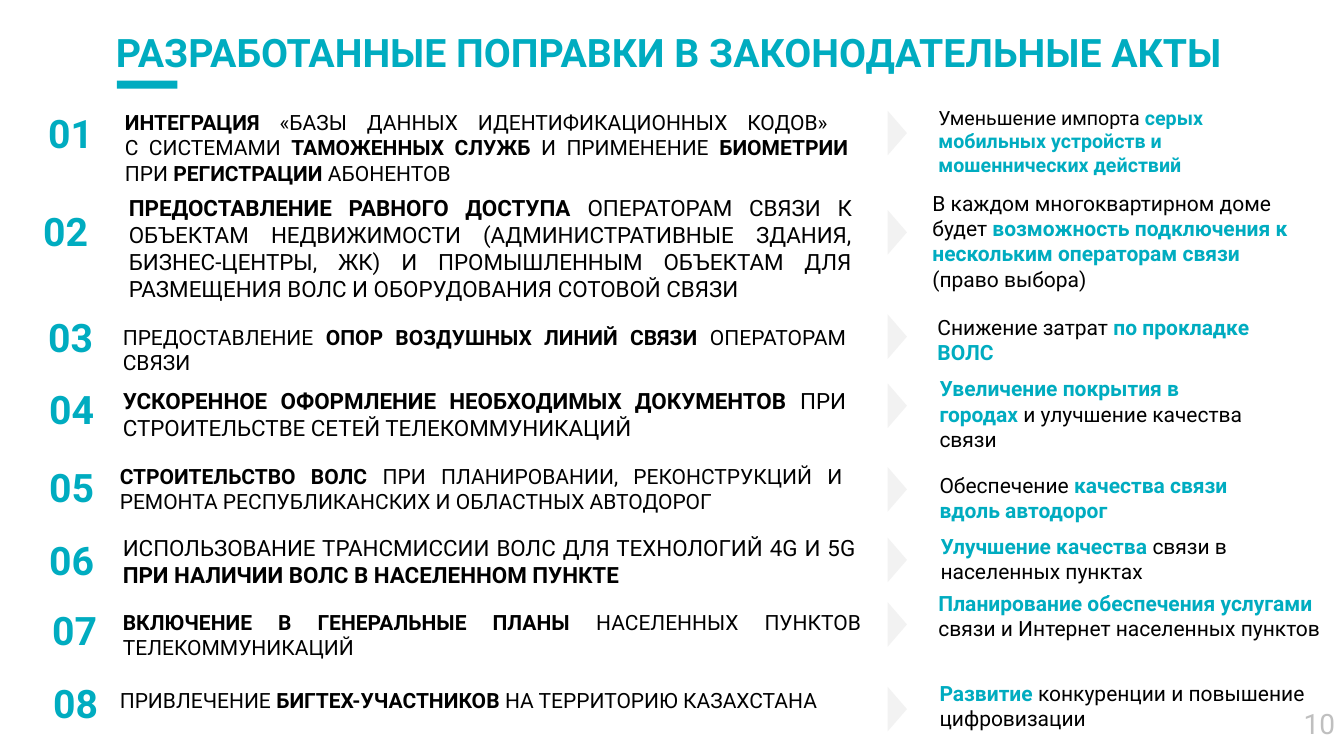
from pptx import Presentation
from pptx.dml.color import RGBColor
from pptx.enum.shapes import MSO_SHAPE as Shape
from pptx.enum.text import MSO_ANCHOR as Anchor, MSO_AUTO_SIZE as Fit, PP_ALIGN as Align
from pptx.util import Inches, Pt

COLORS = {"accent": "00ACC0", "text": "000000", "arrow": "F2F2F2", "page": "BFBFBF"}
GRID = Inches(0.01)
ARROW_CENTER, ARROW_LENGTH, ARROW_WIDTH = 890, 19, 44

deck = Presentation()
deck.slide_width, deck.slide_height = 1333 * GRID, 750 * GRID
slide = deck.slides.add_slide(deck.slide_layouts[5])


def write(text, left, top, width, lines=1, size=15, color="text", strong="text",
          bold=False, align=Align.LEFT, box=None):
    box = box or slide.shapes.add_textbox(0, 0, 0, 0)
    box.left, box.top, box.width = left * GRID, top * GRID, width * GRID
    box.height = round((10 + lines * size * 1.69) * GRID)
    frame = box.text_frame
    frame.word_wrap = True
    frame.auto_size = Fit.SHAPE_TO_FIT_TEXT
    frame.vertical_anchor = Anchor.TOP
    paragraph = frame.paragraphs[0]
    paragraph.alignment = align
    for part, piece in enumerate(text.split("*")):
        marked = part % 2 == 1
        for number, line in enumerate(piece.split("\n")):
            if number:
                paragraph.add_line_break()
            if line:
                run = paragraph.add_run()
                run.text = line
                run.font.name = "Roboto"
                run.font.size = Pt(size)
                run.font.bold = bold or marked
                run.font.color.rgb = RGBColor.from_string(COLORS[strong if marked else color])


def draw(kind, left, top, width, height, color, rotation=0):
    figure = slide.shapes.add_shape(kind, round(left * GRID), round(top * GRID),
                                    width * GRID, height * GRID)
    figure.rotation = rotation
    figure.shadow.inherit = False
    figure.fill.solid()
    figure.fill.fore_color.rgb = RGBColor.from_string(COLORS[color])
    figure.line.fill.background()


write("РАЗРАБОТАННЫЕ ПОПРАВКИ В ЗАКОНОДАТЕЛЬНЫЕ АКТЫ", 105, 23, 1254,
      size=28, color="accent", bold=True, box=slide.shapes.title)
draw(Shape.RECTANGLE, 116, 80, 60, 8, "accent")

amendments = [
    dict(number=(38, 104), arrow=132,
         change=dict(left=114, top=104, width=737, lines=3,
                     text="*ИНТЕГРАЦИЯ* «БАЗЫ ДАННЫХ ИДЕНТИФИКАЦИОННЫХ КОДОВ» \n"
                          "С СИСТЕМАМИ *ТАМОЖЕННЫХ СЛУЖБ* И ПРИМЕНЕНИЕ *БИОМЕТРИИ* "
                          "ПРИ *РЕГИСТРАЦИИ* АБОНЕНТОВ"),
         effect=dict(left=921, top=100, width=313, lines=3, size=14,
                     text="Уменьшение импорта *серых мобильных устройств и "
                          "мошеннических действий*")),
    dict(number=(33, 201), arrow=230.5,
         change=dict(left=118, top=188, width=737, lines=4, size=16,
                     text="*ПРЕДОСТАВЛЕНИЕ РАВНОГО ДОСТУПА *ОПЕРАТОРАМ СВЯЗИ К ОБЪЕКТАМ "
                          "НЕДВИЖИМОСТИ (АДМИНИСТРАТИВНЫЕ ЗДАНИЯ, БИЗНЕС-ЦЕНТРЫ, ЖК) "
                          "И ПРОМЫШЛЕННЫМ ОБЪЕКТАМ ДЛЯ РАЗМЕЩЕНИЯ ВОЛС И ОБОРУДОВАНИЯ "
                          "СОТОВОЙ СВЯЗИ"),
         effect=dict(left=915, top=184, width=387, lines=4,
                     text="В каждом многоквартирном доме будет *возможность подключения "
                          "к нескольким операторам связи *(право выбора)")),
    dict(number=(38, 306), arrow=334,
         change=dict(left=112, top=317, width=737, lines=2,
                     text="ПРЕДОСТАВЛЕНИЕ *ОПОР ВОЗДУШНЫХ ЛИНИЙ СВЯЗИ *ОПЕРАТОРАМ СВЯЗИ"),
         effect=dict(left=920, top=307, width=367, lines=2,
                     text="Снижение затрат *по прокладке ВОЛС*")),
    dict(number=(39, 377), arrow=402.5,
         change=dict(left=112, top=379, width=737, lines=2, size=16,
                     text="*УСКОРЕННОЕ ОФОРМЛЕНИЕ НЕОБХОДИМЫХ ДОКУМЕНТОВ *ПРИ "
                          "СТРОИТЕЛЬСТВЕ СЕТЕЙ ТЕЛЕКОММУНИКАЦИЙ"),
         effect=dict(left=922, top=368, width=337, lines=3,
                     text="*Увеличение покрытия в городах *и улучшение качества связи")),
    dict(number=(39, 455), arrow=485.5,
         change=dict(left=109, top=455, width=737, lines=2,
                     text="*СТРОИТЕЛЬСТВО ВОЛС *ПРИ ПЛАНИРОВАНИИ, РЕКОНСТРУКЦИЙ И РЕМОНТА "
                          "РЕСПУБЛИКАНСКИХ И ОБЛАСТНЫХ АВТОДОРОГ"),
         effect=dict(left=922, top=464, width=325, lines=2,
                     text="Обеспечение *качества связи вдоль автодорог*")),
    dict(number=(39, 527), arrow=555.5,
         change=dict(left=112, top=525, width=747, lines=2, size=16,
                     text="ИСПОЛЬЗОВАНИЕ ТРАНСМИССИИ ВОЛС ДЛЯ ТЕХНОЛОГИЙ 4G И 5G "
                          "*ПРИ НАЛИЧИИ ВОЛС В НАСЕЛЕННОМ ПУНКТЕ*"),
         effect=dict(left=923, top=524, width=325, lines=2,
                     text="*Улучшение качества *связи в населенных пунктах")),
    dict(number=(42, 597), arrow=619.5,
         change=dict(left=112, top=600, width=752, lines=2,
                     text="*ВКЛЮЧЕНИЕ В ГЕНЕРАЛЬНЫЕ ПЛАНЫ* НАСЕЛЕННЫХ ПУНКТОВ "
                          "ТЕЛЕКОММУНИКАЦИЙ"),
         effect=dict(left=921, top=581, width=410, lines=3,
                     text="*Планирование обеспечения услугами *связи и Интернет "
                          "населенных пунктов")),
    dict(number=(43, 669), arrow=703.5,
         change=dict(left=109, top=677, width=753,
                     text="ПРИВЛЕЧЕНИЕ *БИГТЕХ-УЧАСТНИКОВ* НА ТЕРРИТОРИЮ КАЗАХСТАНА"),
         effect=dict(left=922, top=670, width=410, lines=2,
                     text="*Развитие *конкуренции и повышение цифровизации")),
]

for order, amendment in enumerate(amendments, 1):
    number_left, number_top = amendment["number"]
    write(f"{order:02}", number_left, number_top, 83, size=28, color="accent", bold=True)
    write(**amendment["change"], align=Align.JUSTIFY)
    draw(Shape.ISOSCELES_TRIANGLE, ARROW_CENTER - ARROW_WIDTH / 2,
         amendment["arrow"] - ARROW_LENGTH / 2, ARROW_WIDTH, ARROW_LENGTH, "arrow", 90)
    write(**amendment["effect"], strong="accent")

write("10", 1266, 696, 68, size=20, color="page", align=Align.RIGHT)

deck.save("out.pptx")
